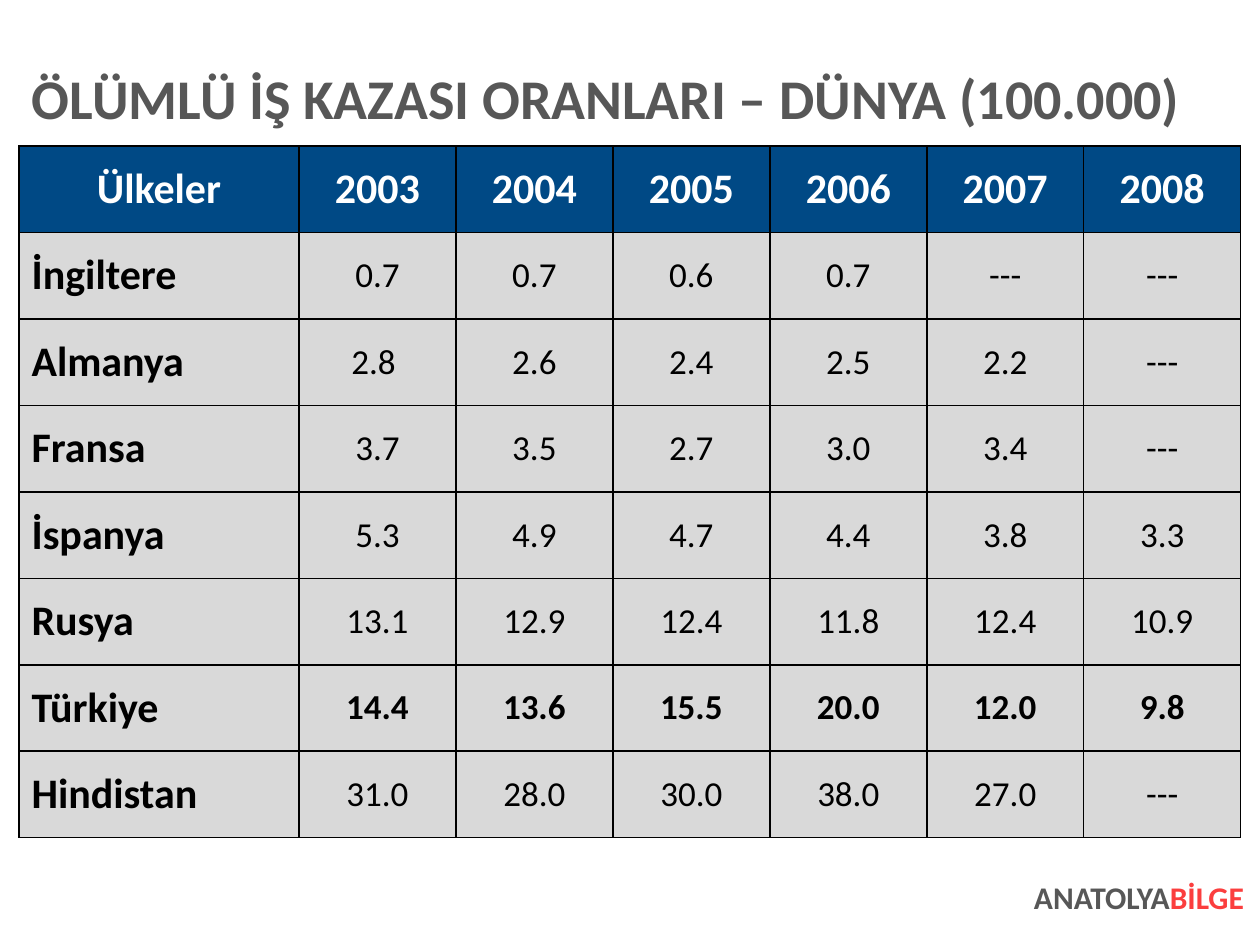
from lxml.etree import SubElement
from pptx import Presentation
from pptx.dml.color import RGBColor
from pptx.enum.text import MSO_ANCHOR, MSO_AUTO_SIZE, PP_ALIGN
from pptx.oxml.ns import qn
from pptx.util import Emu, Pt

EMU_PER_PX = 914400 / 126
FONT = "Calibri"
GREY = RGBColor(0x57, 0x57, 0x57)
RED = RGBColor(0xFB, 0x3E, 0x3E)
NAVY = RGBColor(0x00, 0x49, 0x85)
LIGHT_GREY = RGBColor(0xD9, 0xD9, 0xD9)
WHITE = RGBColor(0xFF, 0xFF, 0xFF)
BLACK = RGBColor(0x00, 0x00, 0x00)

HEADINGS = ["Ülkeler", "2003", "2004", "2005", "2006", "2007", "2008"]
RATES = [
    ["İngiltere", "0.7", "0.7", "0.6", "0.7", "---", "---"],
    ["Almanya", "2.8 ", "2.6", "2.4", "2.5", "2.2", "---"],
    ["Fransa", "3.7", "3.5", "2.7", "3.0", "3.4", "---"],
    ["İspanya", "5.3", "4.9", "4.7", "4.4", "3.8", "3.3"],
    ["Rusya", "13.1", "12.9", "12.4", "11.8", "12.4", "10.9"],
    ["Türkiye", "14.4", "13.6", "15.5", "20.0", "12.0", "9.8"],
    ["Hindistan", "31.0", "28.0", "30.0", "38.0", "27.0", "---"],
]
HIGHLIGHTED = "Türkiye"
COUNTRY_WIDTH = 280
YEAR_WIDTH = 157


def px(length):
    return Emu(round(length * EMU_PER_PX))


def style_run(run, size, color, bold=True):
    run.font.name = FONT
    run.font.size = Pt(size)
    run.font.bold = bold
    run.font.color.rgb = color


def set_margins(frame, horizontal, vertical):
    frame.margin_left = frame.margin_right = px(horizontal)
    frame.margin_top = frame.margin_bottom = px(vertical)


def set_title(slide, text):
    title = slide.shapes.title
    title.left, title.top, title.width, title.height = map(px, (32, 57, 1215, 89))
    frame = title.text_frame
    frame.text = text
    frame.auto_size = MSO_AUTO_SIZE.NONE
    frame.vertical_anchor = MSO_ANCHOR.MIDDLE
    set_margins(frame, 0, 6)
    heading = frame.paragraphs[0]
    heading.alignment = PP_ALIGN.LEFT
    heading.line_spacing = 0.9
    style_run(heading.runs[0], 32, GREY)


def add_borders(cell):
    properties = cell._tc.get_or_add_tcPr()
    for side in ("lnL", "lnR", "lnT", "lnB"):
        border = SubElement(properties, qn(f"a:{side}"), w=str(Pt(1)))
        fill = SubElement(border, qn("a:solidFill"))
        SubElement(fill, qn("a:srgbClr"), val=str(BLACK))


def fill_cell(cell, text, fill, size, color, bold, alignment):
    add_borders(cell)
    cell.fill.solid()
    cell.fill.fore_color.rgb = fill
    cell.vertical_anchor = MSO_ANCHOR.MIDDLE
    cell.text_frame.text = text
    paragraph = cell.text_frame.paragraphs[0]
    paragraph.alignment = alignment
    style_run(paragraph.runs[0], size, color, bold)


def add_rates_table(slide):
    years = len(HEADINGS) - 1
    width = COUNTRY_WIDTH + years * YEAR_WIDTH
    table = slide.shapes.add_table(
        len(RATES) + 1, len(HEADINGS), px(19), px(146), px(width), px(692)
    ).table
    for index, column in enumerate(table.columns):
        column.width = px(YEAR_WIDTH if index else COUNTRY_WIDTH)
    for column, heading in enumerate(HEADINGS):
        fill_cell(table.cell(0, column), heading, NAVY, 24, WHITE, True, PP_ALIGN.CENTER)
    for row, (country, *rates) in enumerate(RATES, start=1):
        fill_cell(table.cell(row, 0), country, LIGHT_GREY, 24, BLACK, True, PP_ALIGN.LEFT)
        for column, rate in enumerate(rates, start=1):
            fill_cell(table.cell(row, column), rate, LIGHT_GREY, 20, BLACK,
                      country == HIGHLIGHTED, PP_ALIGN.CENTER)


def add_footer(slide, parts):
    footer = slide.shapes.add_textbox(px(953), px(878), px(291), px(71))
    frame = footer.text_frame
    frame.word_wrap = True
    set_margins(frame, 0, 0)
    line = frame.paragraphs[0]
    line.alignment = PP_ALIGN.RIGHT
    for text, color in parts:
        run = line.add_run()
        run.text = text
        style_run(run, 18, color)


def main():
    presentation = Presentation()
    presentation.slide_width = px(1260)
    presentation.slide_height = px(945)
    slide = presentation.slides.add_slide(presentation.slide_layouts[5])
    add_footer(slide, [("ANATOLYA", GREY), ("BİLGE", RED)])
    add_rates_table(slide)
    set_title(slide, "ÖLÜMLÜ İŞ KAZASI ORANLARI – DÜNYA (100.000)")
    presentation.save("out.pptx")


if __name__ == "__main__":
    main()
